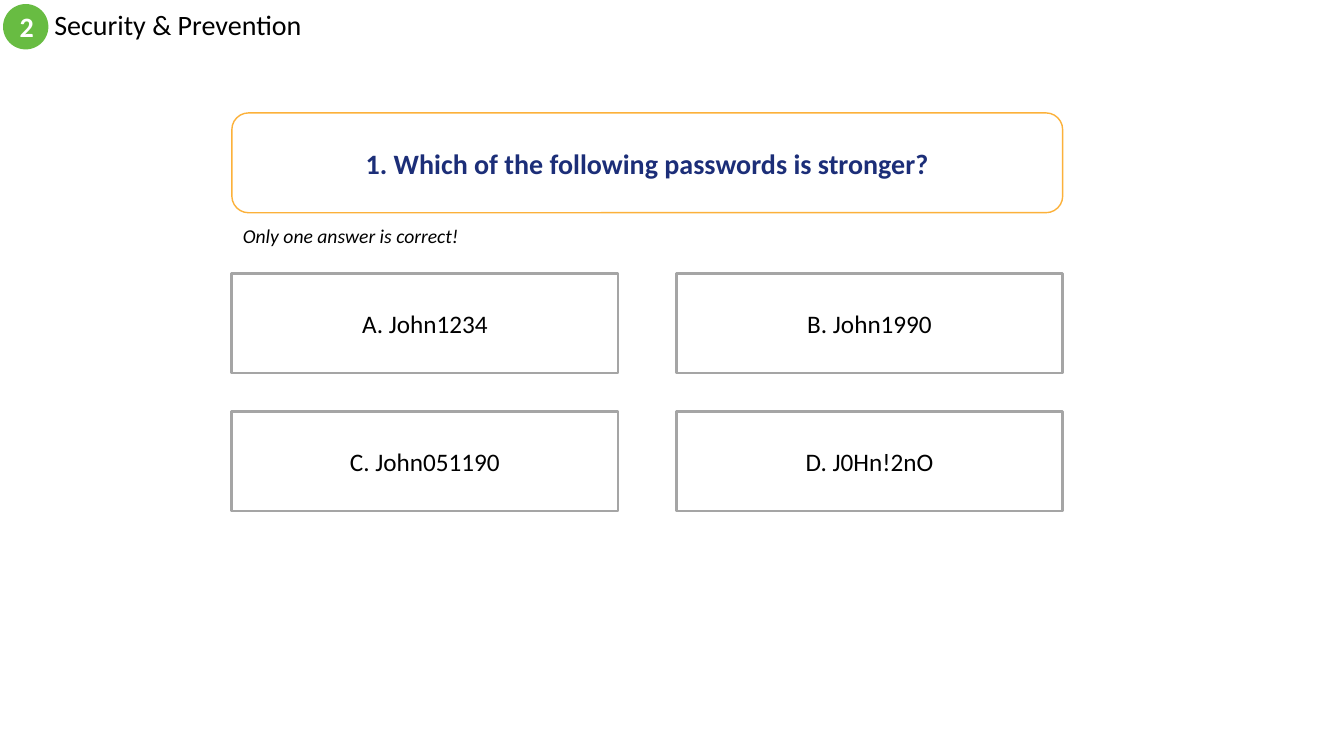
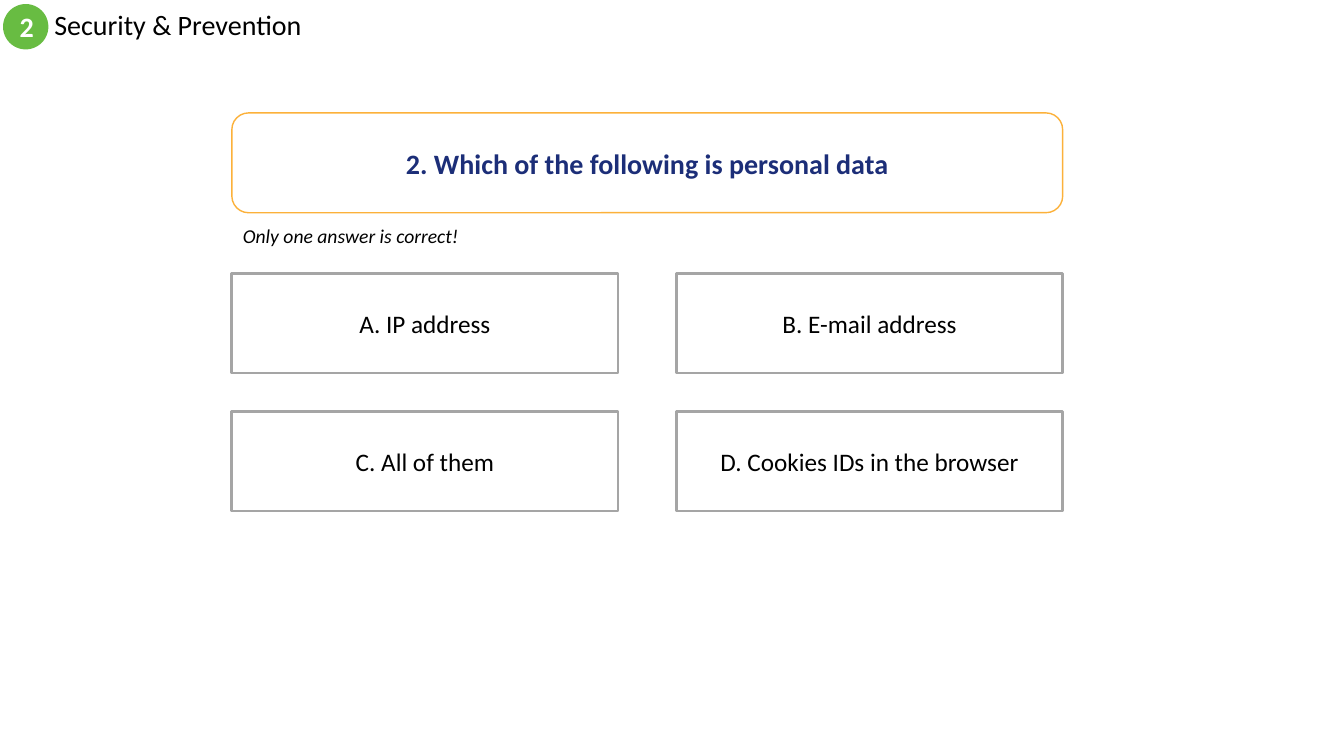
"""Build two quiz slides on security and prevention."""
from dataclasses import dataclass

from pptx import Presentation
from pptx.dml.color import RGBColor as RGB
from pptx.enum.shapes import MSO_SHAPE as Shape
from pptx.enum.text import MSO_ANCHOR as Anchor, MSO_AUTO_SIZE as Fit, PP_ALIGN as Align
from pptx.util import Inches, Pt


@dataclass(frozen=True)
class Theme:
    """Colours, font and type sizes shared by the slides."""
    font: str = "Calibri"
    black: str = "000000"
    white: str = "FFFFFF"
    green: str = "68BC42"
    orange: str = "FCB13A"
    navy: str = "1C2E78"
    grey: str = "A5A5A5"
    head: int = 20
    answer: int = 18
    note: int = 14


THEME = Theme()
LEFT, TOP = 2.3, 2.71
BOX_W, BOX_H = 3.83, 0.99
GAP_X, GAP_Y = 0.58, 0.38
QUIZ = [
    ("1. Which of the following passwords is stronger?",
     ["A. John1234", "B. John1990", "C. John051190", "D. J0Hn!2nO"]),
    ("2. Which of the following is personal data",
     ["A. IP address", "B. E-mail address", "C. All of them",
      "D. Cookies IDs in the browser"]),
]


def write(shape, text, size, color=THEME.black, align=Align.CENTER,
          anchor=Anchor.MIDDLE, bold=False, italic=False):
    """Put one styled paragraph in a shape and return it."""
    frame = shape.text_frame
    frame.word_wrap = True
    frame.vertical_anchor = anchor
    para = frame.paragraphs[0]
    para.text = text
    para.alignment = align
    font = para.font
    font.name, font.size = THEME.font, Pt(size)
    font.bold, font.italic = bold, italic
    font.color.rgb = RGB.from_string(color)
    return para


def add_box(slide, kind, area, fill=THEME.white, line=None, width=1):
    """Add a filled preset shape with an optional outline."""
    box = slide.shapes.add_shape(kind, *map(Inches, area))
    box.shadow.inherit = False
    box.fill.solid()
    box.fill.fore_color.rgb = RGB.from_string(fill)
    if line:
        box.line.color.rgb = RGB.from_string(line)
        box.line.width = Pt(width)
    else:
        box.line.fill.background()
    return box


def add_label(slide, area):
    """Add an empty text box."""
    return slide.shapes.add_textbox(*map(Inches, area))


def add_header(slide, number, title):
    """Add the section title with its numbered badge."""
    label = add_label(slide, (0.44, 0.04, 8, 0.45))
    para = write(label, title, THEME.head, align=Align.LEFT)
    para.line_spacing = 0.9
    badge = add_box(slide, Shape.OVAL, (0.03, 0.04, 0.45, 0.45), THEME.green)
    write(badge, number, THEME.head, THEME.white, bold=True)


def add_question(slide, text):
    """Add the question panel and the hint below it."""
    area = (LEFT, 1.12, 2 * BOX_W + GAP_X, BOX_H)
    panel = add_box(slide, Shape.ROUNDED_RECTANGLE, area, line=THEME.orange)
    write(panel, text, THEME.head, THEME.navy, bold=True)
    hint = add_label(slide, (2.31, 2.17, 2.36, 0.34))
    write(hint, "Only one answer is correct!", THEME.note,
          align=Align.LEFT, anchor=Anchor.TOP, italic=True)
    hint.text_frame.auto_size = Fit.SHAPE_TO_FIT_TEXT


def add_answers(slide, answers):
    """Lay the answers out in two columns."""
    for index, text in enumerate(answers):
        row, col = divmod(index, 2)
        area = (LEFT + col * (BOX_W + GAP_X), TOP + row * (BOX_H + GAP_Y),
                BOX_W, BOX_H)
        box = add_box(slide, Shape.RECTANGLE, area, line=THEME.grey, width=2)
        write(box, text, THEME.answer)


def main():
    """Build and save the deck."""
    deck = Presentation()
    deck.slide_width, deck.slide_height = Inches(13.33), Inches(7.5)
    for question, answers in QUIZ:
        slide = deck.slides.add_slide(deck.slide_layouts[6])
        add_header(slide, "2", "Security & Prevention")
        add_question(slide, question)
        add_answers(slide, answers)
    deck.save("out.pptx")


if __name__ == "__main__":
    main()
